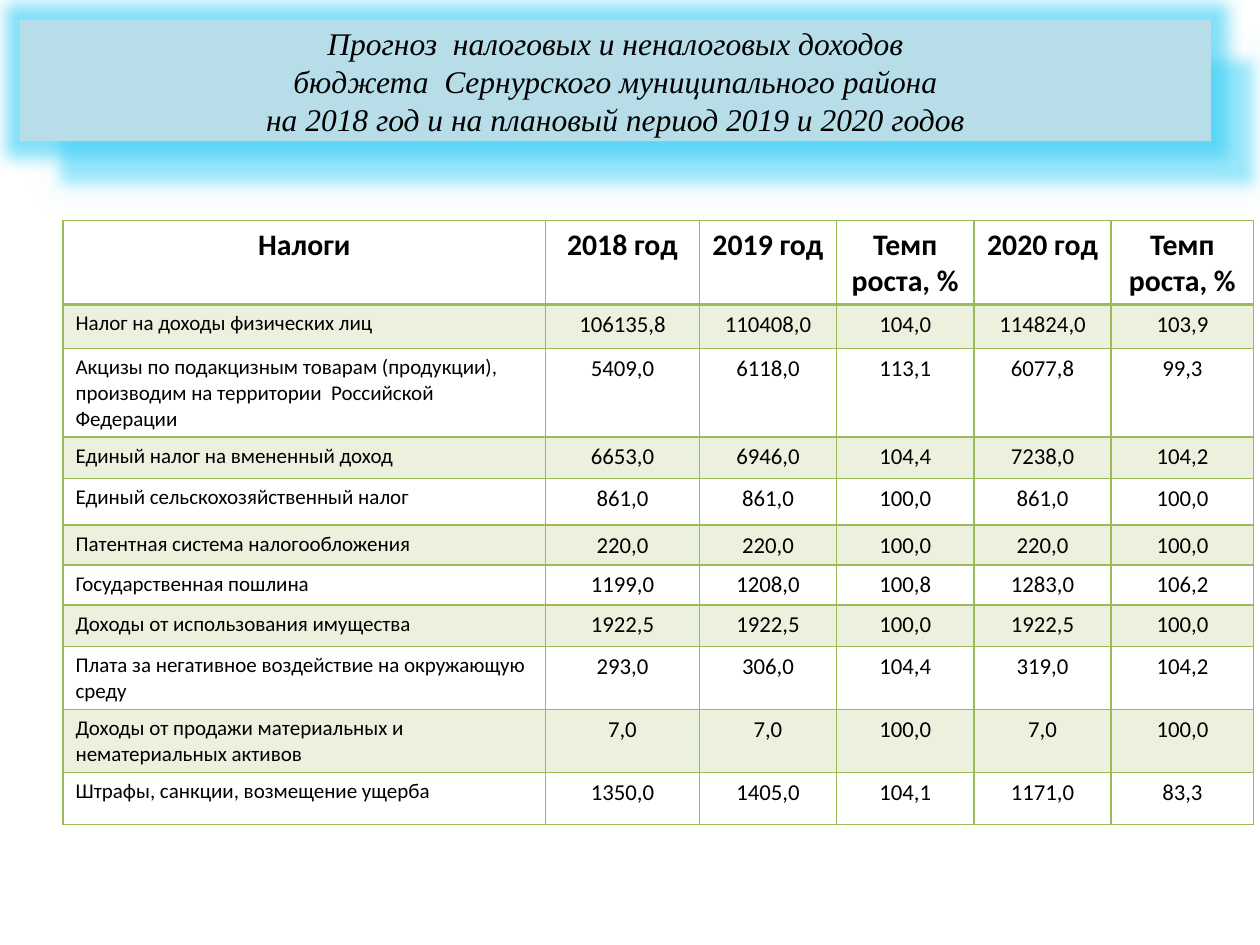
import dataclasses

import lxml.etree
import pptx
import pptx.dml.color
import pptx.enum.text
import pptx.oxml
import pptx.oxml.ns
import pptx.util

SLIDE_WIDTH, SLIDE_HEIGHT = 10, 7.5
GREEN, BLACK = "9BBB59", "000000"
CENTER = pptx.enum.text.PP_ALIGN.CENTER
LEFT = pptx.enum.text.PP_ALIGN.LEFT


@dataclasses.dataclass(frozen=True)
class TextStyle:
    font: str
    size: float
    bold: bool = False
    italic: bool = False


@dataclasses.dataclass(frozen=True)
class TaxRow:
    height: float
    name: str
    values: str  # 2018, 2019, growth, 2020, growth


TITLE_STYLE = TextStyle("Times New Roman", 18, italic=True)
HEADER_STYLE = TextStyle("Calibri", 17, bold=True)
NAME_STYLE = TextStyle("Calibri", 12)
VALUE_STYLE = TextStyle("Calibri", 13)

TITLE_LINES = [
    "Прогноз  налоговых и неналоговых доходов",
    "бюджета  Сернурского муниципального района",
    "на 2018 год и на плановый период 2019 и 2020 годов",
]
COLUMN_WIDTHS = [3.83, 1.22, 1.09, 1.09, 1.09, 1.13]
HEADER_HEIGHT = 0.41
HEADERS = ["Налоги", "2018 год", "2019 год", "Темп роста, %", "2020 год", "Темп роста, %"]
TAX_ROWS = [
    TaxRow(0.35, "Налог на доходы физических лиц", "106135,8 110408,0 104,0 114824,0 103,9"),
    TaxRow(0.33, "Акцизы по подакцизным товарам (продукции), производим на территории  "
                 "Российской Федерации", "5409,0 6118,0 113,1 6077,8 99,3"),
    TaxRow(0.33, "Единый налог на вмененный доход", "6653,0 6946,0 104,4 7238,0 104,2"),
    TaxRow(0.37, "Единый сельскохозяйственный налог", "861,0 861,0 100,0 861,0 100,0"),
    TaxRow(0.31, "Патентная система налогообложения", "220,0 220,0 100,0 220,0 100,0"),
    TaxRow(0.30, "Государственная пошлина", "1199,0 1208,0 100,8 1283,0 106,2"),
    TaxRow(0.33, "Доходы от использования имущества", "1922,5 1922,5 100,0 1922,5 100,0"),
    TaxRow(0.49, "Плата за негативное воздействие на окружающую среду",
           "293,0 306,0 104,4 319,0 104,2"),
    TaxRow(0.41, "Доходы от продажи материальных и нематериальных активов",
           "7,0 7,0 100,0 7,0 100,0"),
    TaxRow(0.41, "Штрафы, санкции, возмещение ущерба", "1350,0 1405,0 104,1 1171,0 83,3"),
]


def color(value: str) -> pptx.dml.color.RGBColor:
    return pptx.dml.color.RGBColor.from_string(value)


def write_paragraph(paragraph, text: str, style: TextStyle, alignment=CENTER) -> None:
    paragraph.alignment = alignment
    run = paragraph.add_run()
    run.text = text
    run.font.name = style.font
    run.font.size = pptx.util.Pt(style.size)
    run.font.bold = style.bold
    run.font.italic = style.italic
    run.font.color.rgb = color(BLACK)


def parse_drawing(xml: str) -> lxml.etree._Element:
    """Parse an element whose opening tag holds the placeholder NS."""
    return pptx.oxml.parse_xml(xml.replace("NS", pptx.oxml.ns.nsdecls("a"), 1))


def set_borders(cell, bottom_width: float) -> None:
    properties = cell._tc.get_or_add_tcPr()
    widths = {"lnL": 1, "lnR": 1, "lnT": 1, "lnB": bottom_width}
    for index, (side, width) in enumerate(widths.items()):
        properties.insert(index, parse_drawing(
            f'<a:{side} NS w="{pptx.util.Pt(width)}"><a:solidFill>'
            f'<a:srgbClr val="{GREEN}"/></a:solidFill></a:{side}>'))


def fill_cell(cell, banded: bool) -> None:
    if not banded:
        cell.fill.background()
        return
    cell.fill.solid()
    cell.fill.fore_color.rgb = color(GREEN)
    tint = cell._tc.tcPr.find(".//" + pptx.oxml.ns.qn("a:srgbClr"))
    lxml.etree.SubElement(tint, pptx.oxml.ns.qn("a:alpha"), val="20000")


def draw_title(slide) -> None:
    title = slide.shapes.title
    title.left, title.top = pptx.util.Inches(0.16), pptx.util.Inches(0.16)
    title.width, title.height = pptx.util.Inches(9.45), pptx.util.Inches(0.96)
    title.fill.solid()
    title.fill.fore_color.rgb = color("B7DEE8")
    frame = title.text_frame
    frame.word_wrap = True
    frame.auto_size = pptx.enum.text.MSO_AUTO_SIZE.SHAPE_TO_FIT_TEXT
    for index, line in enumerate(TITLE_LINES):
        paragraph = frame.add_paragraph() if index else frame.paragraphs[0]
        write_paragraph(paragraph, line, TITLE_STYLE)

    # Cyan glow with a paler soft shadow below and to the right
    title._element.spPr.append(parse_drawing(
        f'<a:effectLst NS><a:glow rad="{pptx.util.Inches(0.25)}">'
        '<a:srgbClr val="33CCF5"><a:alpha val="60000"/></a:srgbClr></a:glow>'
        f'<a:outerShdw blurRad="{pptx.util.Inches(0.1)}" dist="{pptx.util.Inches(0.46)}"'
        ' dir="2700000" algn="tl" rotWithShape="0">'
        '<a:srgbClr val="9CE7FB"/></a:outerShdw></a:effectLst>'))


def draw_table(slide) -> None:
    heights = [HEADER_HEIGHT] + [row.height for row in TAX_ROWS]
    table = slide.shapes.add_table(
        len(heights), len(COLUMN_WIDTHS),
        pptx.util.Inches(SLIDE_WIDTH * 0.05), pptx.util.Inches(1.75),
        pptx.util.Inches(sum(COLUMN_WIDTHS)), pptx.util.Inches(sum(heights))).table
    table.first_row = table.horz_banding = False
    for column, width in zip(table.columns, COLUMN_WIDTHS):
        column.width = pptx.util.Inches(width)

    contents = [HEADERS] + [[row.name, *row.values.split()] for row in TAX_ROWS]
    for row_index, texts in enumerate(contents):
        table.rows[row_index].height = pptx.util.Inches(heights[row_index])
        is_header = row_index == 0
        for column_index, text in enumerate(texts):
            cell = table.cell(row_index, column_index)
            is_name = column_index == 0 and not is_header
            style = HEADER_STYLE if is_header else NAME_STYLE if is_name else VALUE_STYLE
            write_paragraph(cell.text_frame.paragraphs[0], text, style,
                            LEFT if is_name else CENTER)
            fill_cell(cell, banded=row_index % 2 == 1)
            set_borders(cell, bottom_width=2 if is_header else 1)


def main() -> None:
    presentation = pptx.Presentation()
    presentation.slide_width = pptx.util.Inches(SLIDE_WIDTH)
    presentation.slide_height = pptx.util.Inches(SLIDE_HEIGHT)
    slide = presentation.slides.add_slide(presentation.slide_layouts.get_by_name("Title Only"))
    draw_title(slide)
    draw_table(slide)
    presentation.save("out.pptx")


if __name__ == "__main__":
    main()
